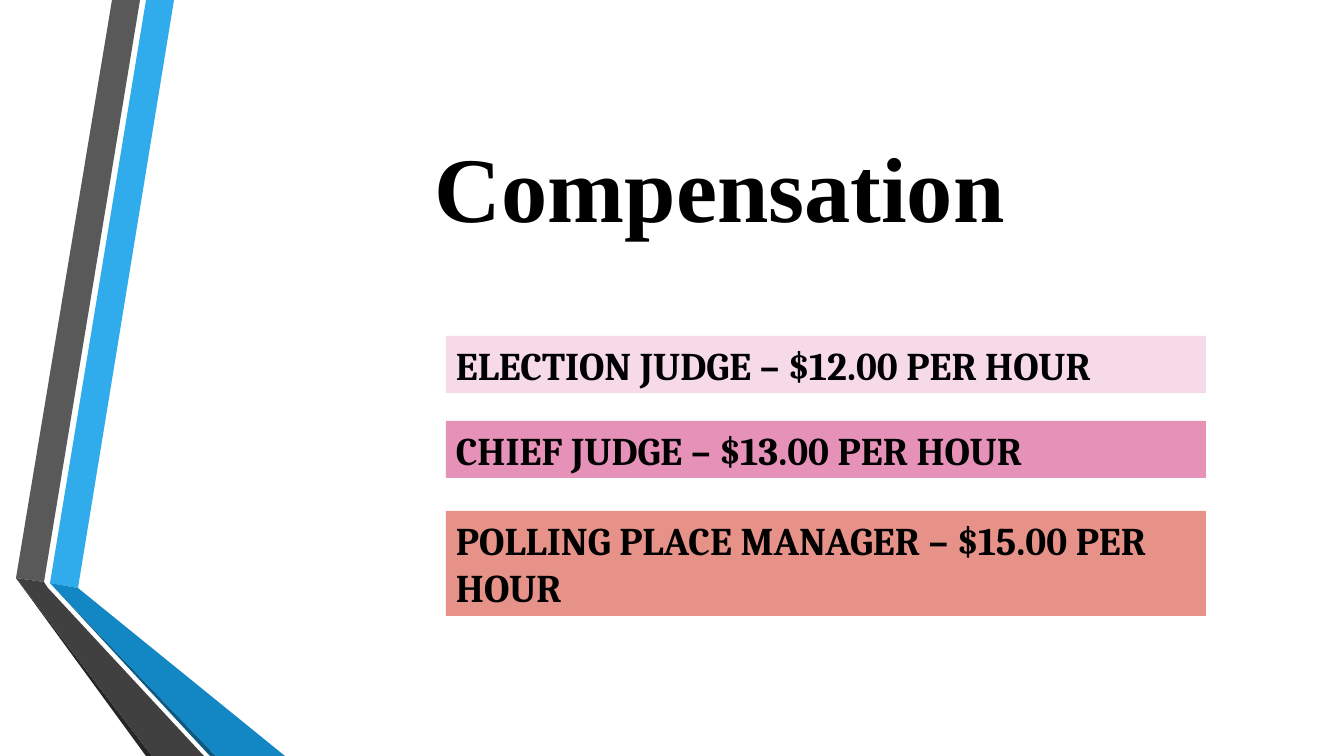
from pptx import Presentation
from pptx.dml.color import RGBColor
from pptx.enum.shapes import MSO_SHAPE
from pptx.enum.text import MSO_ANCHOR, PP_ALIGN
from pptx.util import Pt

EMU_PER_PX = 914400 / 100.8
BLACK = RGBColor(0x00, 0x00, 0x00)
BLUE = RGBColor(0x30, 0xAC, 0xEC)
MID_BLUE = RGBColor(0x12, 0x87, 0xC3)
DARK_BLUE = RGBColor(0x0C, 0x5A, 0x82)
GREY = RGBColor(0x59, 0x59, 0x59)
DARK_GREY = RGBColor(0x40, 0x40, 0x40)
CHARCOAL = RGBColor(0x26, 0x26, 0x26)
PALE_PINK = RGBColor(0xF7, 0xDA, 0xE7)
PINK = RGBColor(0xE6, 0x91, 0xB7)
CORAL = RGBColor(0xE6, 0x92, 0x89)


def px(length):
    return round(length * EMU_PER_PX)


def write_text(shape, text, font_name, size, anchor):
    frame = shape.text_frame
    frame.word_wrap = True
    frame.vertical_anchor = anchor
    paragraph = frame.paragraphs[0]
    paragraph.text = text
    paragraph.alignment = PP_ALIGN.LEFT
    paragraph.font.name = font_name
    paragraph.font.size = Pt(size)
    paragraph.font.bold = True
    paragraph.font.color.rgb = BLACK


presentation = Presentation()
presentation.slide_width = px(1344)
presentation.slide_height = px(756)
slide = presentation.slides.add_slide(presentation.slide_layouts[6])

ribbons = [
    (BLUE, [(50, 583), (78, 588), (174, 0), (146, 0)]),
    (GREY, [(140, 0), (112, 0), (16, 578), (44, 582)]),
    (CHARCOAL, [(16, 578), (146, 756), (152, 756)]),
    (DARK_BLUE, [(50, 583), (210, 756), (216, 756)]),
    (MID_BLUE, [(50, 583), (216, 756), (285, 756), (78, 588)]),
    (DARK_GREY, [(204, 756), (48, 588), (44, 582), (16, 578), (152, 756)]),
]
for color, points in ribbons:
    builder = slide.shapes.build_freeform(*points[0], scale=EMU_PER_PX)
    builder.add_line_segments(points[1:], close=True)
    ribbon = builder.convert_to_shape()
    ribbon.shadow.inherit = False
    ribbon.fill.solid()
    ribbon.fill.fore_color.rgb = color
    ribbon.line.fill.background()

title = slide.shapes.add_textbox(px(425), px(107), px(812), px(139))
write_text(title, "Compensation", "Times New Roman", 66, MSO_ANCHOR.BOTTOM)

pay_rates = [
    ("ELECTION JUDGE – $12.00 PER HOUR", PALE_PINK, 336, 57),
    ("CHIEF JUDGE – $13.00 PER HOUR", PINK, 421, 57),
    ("POLLING PLACE MANAGER – $15.00 PER HOUR", CORAL, 511, 105),
]
for text, color, top, height in pay_rates:
    bar = slide.shapes.add_shape(MSO_SHAPE.RECTANGLE, px(446), px(top), px(760), px(height))
    bar.shadow.inherit = False
    bar.fill.solid()
    bar.fill.fore_color.rgb = color
    bar.line.fill.background()
    write_text(bar, text, "Cambria", 28, MSO_ANCHOR.TOP)

presentation.save("out.pptx")
